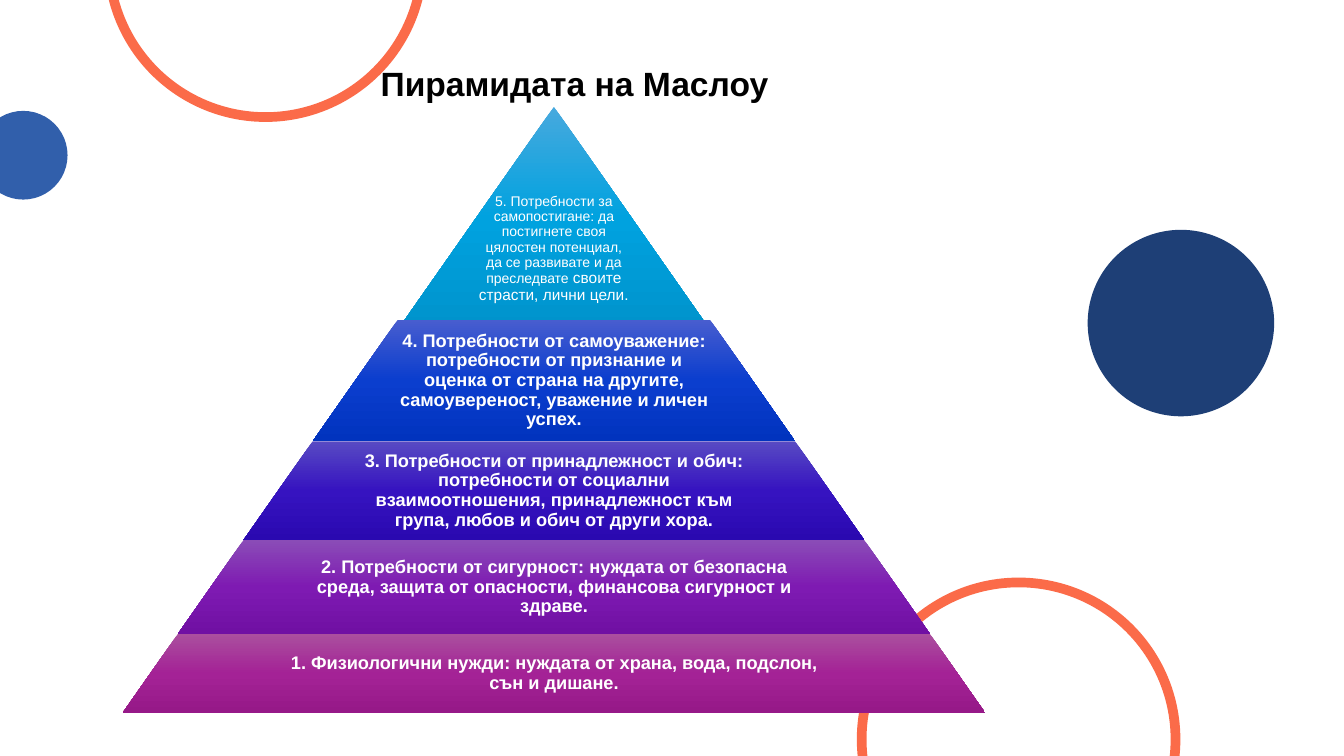
from copy import deepcopy
from dataclasses import dataclass

from pptx import Presentation
from pptx.dml.color import RGBColor
from pptx.enum.shapes import MSO_SHAPE
from pptx.enum.text import MSO_ANCHOR, MSO_AUTO_SIZE, PP_ALIGN
from pptx.oxml.ns import qn
from pptx.util import Inches, Pt


@dataclass(frozen=True)
class Theme:
    font: str = "Arial"
    navy: str = "1E3F76"
    blue: str = "315FAB"
    coral: str = "FB6B49"
    ink: str = "000000"
    white: str = "FFFFFF"
    title: int = 24
    body: int = 13
    small: int = 10
    note: int = 11
    tiers: tuple = (
        ("47A9DE", "00A2DF", "0093CC"),
        ("485DCF", "0B3ECE", "0133BE"),
        ("584AC3", "3613C0", "2A09B0"),
        ("8A4CB7", "7E1AB2", "7010A3"),
        ("AA4F9E", "A42296", "961988"),
    )


COLS, ROWS, CELL = 133.33, 75, 0.1
APEX_COL, APEX_ROW, SLOPE, TEXT_SHARE = 54.95, 10.6, 0.7, 0.65

TOP_TEXT = (
    "5. Потребности за самопостигане: да постигнете своя цялостен потенциал, да се развивате и да преследвате",
    " своите страсти, лични цели.",
)
LOWER_TIERS = (
    (31.7, 12.1, "4. Потребности от самоуважение: потребности от признание и оценка от страна на другите, самоувереност, уважение и личен успех."),
    (43.8, 9.8, "3. Потребности от принадлежност и обич: потребности от социални взаимоотношения, принадлежност към група, любов и обич от други хора."),
    (53.6, 9.3, "2. Потребности от сигурност: нуждата от безопасна среда, защита от опасности, финансова сигурност и здраве."),
    (62.9, 7.8, "1. Физиологични нужди: нуждата от храна, вода, подслон, сън и дишане."),
)


def add_text(p, text, *, font, size, color, bold=False):
    r = p.add_run()
    r.text = text
    r.font.name = font
    r.font.size = Pt(size)
    r.font.bold = bold
    r.font.color.rgb = RGBColor.from_string(color)


class Deck:
    def __init__(self, prs, theme):
        self.theme = theme
        self.s = prs.slides.add_slide(prs.slide_layouts[5])

    def box(self, *cells):
        return [Inches(c * CELL) for c in cells]

    def shape(self, kind, col, row, width, height):
        sp = self.s.shapes.add_shape(kind, *self.box(col, row, width, height))
        sp.shadow.inherit = False
        sp.line.fill.background()
        return sp

    def disc(self, col, row, size, color, kind=MSO_SHAPE.OVAL):
        sp = self.shape(kind, col, row, size, size)
        sp.fill.solid()
        sp.fill.fore_color.rgb = RGBColor.from_string(color)
        return sp

    def ring(self, col, row):
        sp = self.disc(col, row, 32.1, self.theme.coral, MSO_SHAPE.DONUT)
        sp.adjustments[0] = 0.03

    def paragraph(self, tf, anchor, margin_x, margin_y, spacing):
        tf.word_wrap = True
        tf.auto_size = MSO_AUTO_SIZE.NONE
        tf.vertical_anchor = anchor
        tf.margin_left = tf.margin_right = Inches(margin_x)
        tf.margin_top = tf.margin_bottom = Inches(margin_y)
        p = tf.paragraphs[0]
        p.alignment = PP_ALIGN.CENTER
        p.line_spacing = spacing
        return p

    def title(self, text, *cells):
        sp = self.s.shapes.title
        sp.left, sp.top, sp.width, sp.height = self.box(*cells)
        self.s.shapes._spTree.append(sp._element)
        p = self.paragraph(sp.text_frame, MSO_ANCHOR.TOP, 0.1, 0.05, 1.07)
        add_text(p, text, font=self.theme.font, size=self.theme.title,
                 color=self.theme.ink, bold=True)

    def tier(self, row, width, height, colors):
        sp = self.shape(MSO_SHAPE.TRAPEZOID, APEX_COL - width / 2, row, width, height)
        sp.adjustments[0] = SLOPE
        sp.fill.gradient()
        sp.fill.gradient_angle = 270
        stops = sp._element.spPr.find(".//" + qn("a:gsLst"))
        stops.append(deepcopy(stops[0]))
        for i, (stop, color) in enumerate(zip(sp.fill.gradient_stops, colors)):
            stop.position = i / 2
            stop.color.rgb = RGBColor.from_string(color)

    def label(self, row, width, height, runs, bold=False):
        cells = self.box(APEX_COL - width / 2, row, width, height)
        tf = self.s.shapes.add_textbox(*cells).text_frame
        p = self.paragraph(tf, MSO_ANCHOR.MIDDLE, 0.02, 0.02, 0.9)
        for text, size in runs:
            add_text(p, text, font=self.theme.font, size=size,
                     color=self.theme.white, bold=bold)

    def pyramid(self):
        t = self.theme
        height = 22.1
        width = 2 * SLOPE * height
        self.tier(APEX_ROW, width, height, t.tiers[0])
        self.label(16.6, 15.7, 16.2, zip(TOP_TEXT, (t.small, t.note)))
        for (row, height, text), colors in zip(LOWER_TIERS, t.tiers[1:]):
            width += 2 * SLOPE * height
            self.tier(row, width, height, colors)
            self.label(row, width * TEXT_SHARE, height, [(text, t.body)], bold=True)


def main():
    prs = Presentation()
    prs.slide_width = Inches(COLS * CELL)
    prs.slide_height = Inches(ROWS * CELL)
    theme = Theme()
    deck = Deck(prs, theme)
    deck.disc(107.9, 22.8, 18.5, theme.navy)
    deck.disc(-2.1, 11, 8.8, theme.blue)
    deck.ring(85, 57.3)
    deck.ring(10.3, -20)
    deck.title("Пирамидата на Маслоу", 29, 5.5, 56, 5.3)
    deck.pyramid()
    prs.save("out.pptx")


if __name__ == "__main__":
    main()
